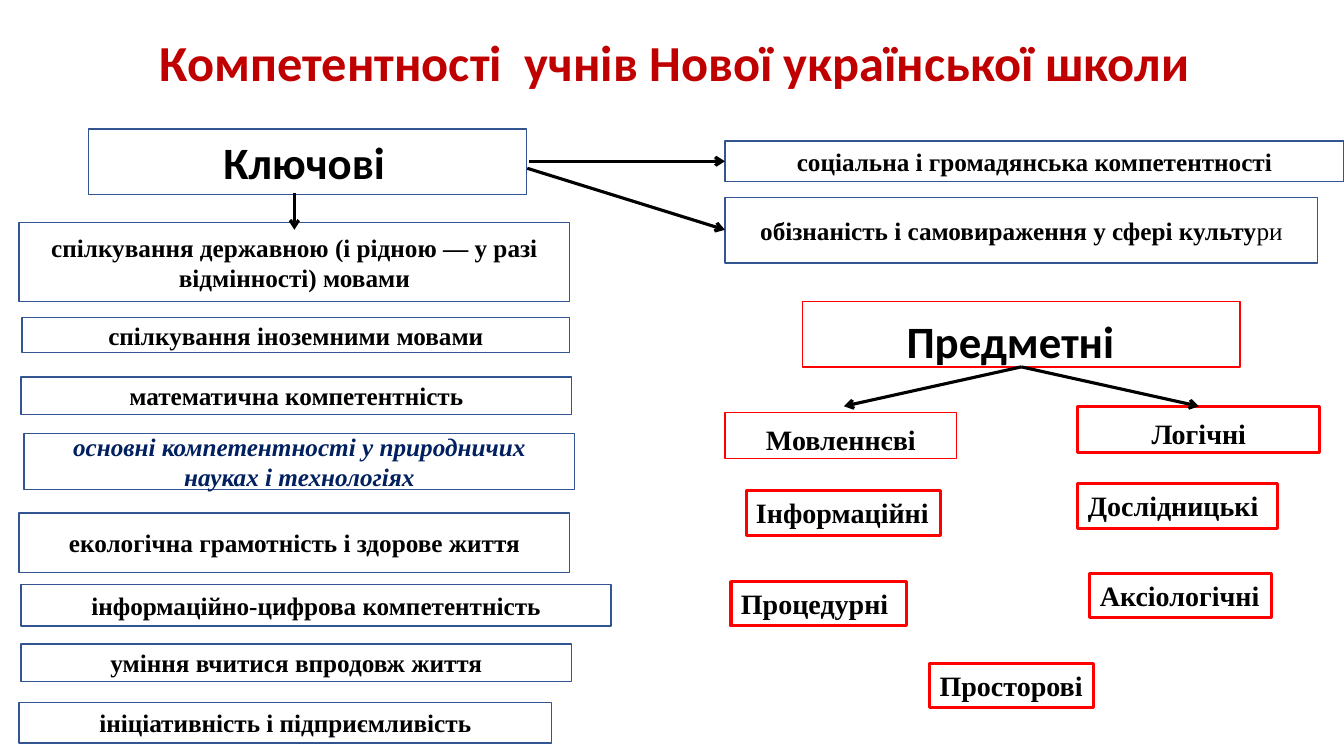
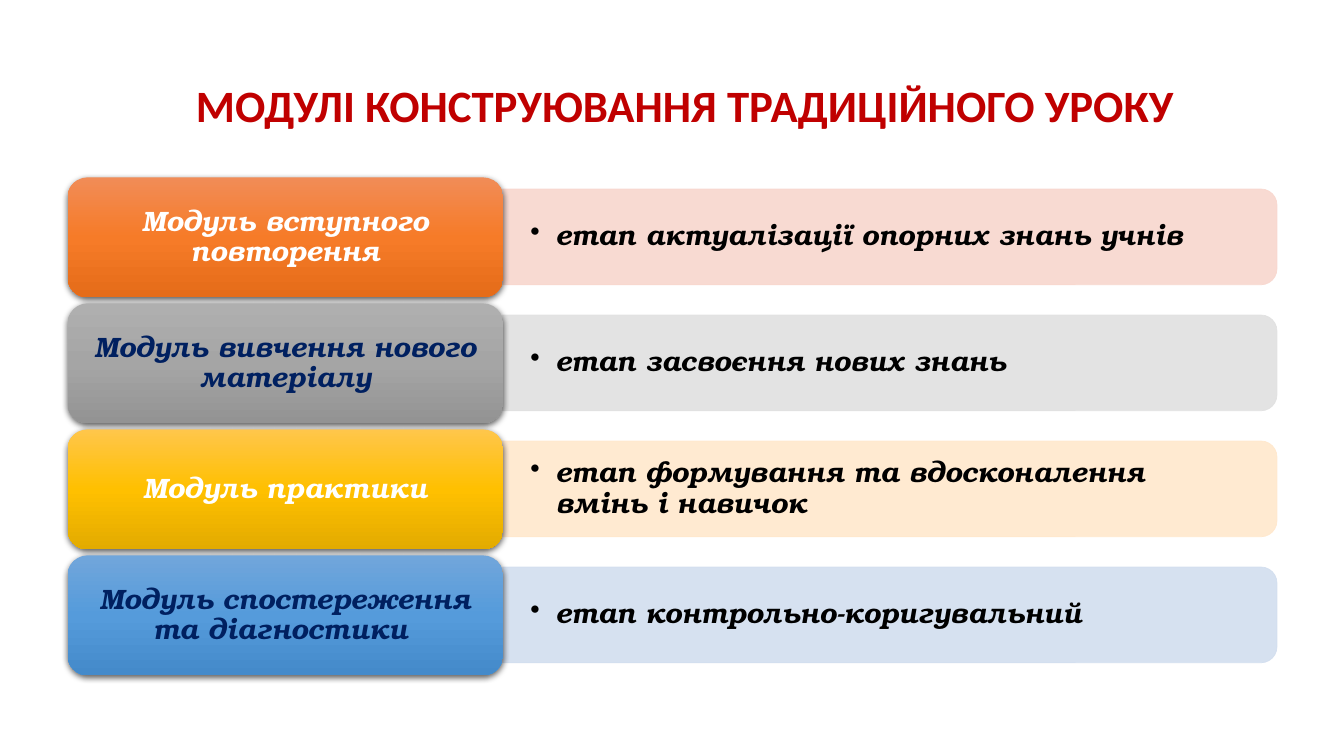
from lxml import etree
from pptx import Presentation
from pptx.dml.color import RGBColor
from pptx.enum.shapes import MSO_CONNECTOR, MSO_SHAPE
from pptx.enum.text import MSO_ANCHOR, MSO_AUTO_SIZE, PP_ALIGN
from pptx.oxml.ns import qn
from pptx.util import Pt

# Enum members
RECT = MSO_SHAPE.RECTANGLE
ROUND = MSO_SHAPE.ROUNDED_RECTANGLE
TAB = MSO_SHAPE.ROUND_2_SAME_RECTANGLE
LINE = MSO_CONNECTOR.STRAIGHT
MID, TOP = MSO_ANCHOR.MIDDLE, MSO_ANCHOR.TOP
LEFT, CENTER = PP_ALIGN.LEFT, PP_ALIGN.CENTER
FIT, FIXED = MSO_AUTO_SIZE.SHAPE_TO_FIT_TEXT, MSO_AUTO_SIZE.NONE

# Shared look: 100 px to the inch
SCALE = 9144
WHITE = RGBColor(0xFF, 0xFF, 0xFF)
BLACK = RGBColor(0, 0, 0)
NAVY = RGBColor(0x00, 0x20, 0x60)
BLUE = RGBColor(0x32, 0x54, 0x91)
RED = RGBColor(0xFF, 0, 0)
WINE = RGBColor(0xC0, 0, 0)
SANS, SERIF, BOOK = "Calibri", "Times New Roman", "TeX Gyre Bonum"

# Left, top, width, height and text of each key competence
KEYS = [
    (19, 221, 546, 78, "спілкування державною (і рідною — у разі відмінності) мовами"),
    (22, 315, 543, 35, "спілкування іноземними мовами"),
    (21, 374, 546, 37, "математична компетентність"),
    (19, 509, 546, 59, "екологічна грамотність і здорове життя"),
    (21, 580, 585, 41, "інформаційно-цифрова компетентність"),
    (21, 639, 546, 37, "уміння вчитися впродовж життя"),
    (19, 697, 528, 40, "ініціативність і підприємливість"),
    (719, 140, 614, 40, "соціальна і громадянська компетентності"),
]

# Left, top, width and text of each tag that fits its text
TAGS = [
    (740, 487, 193, "Інформаційні"),
    (1069, 480, 198, "Дослідницькі"),
    (725, 577, 174, "Процедурні "),
    (1081, 569, 180, "Аксіологічні"),
    (922, 658, 163, "Просторові"),
]

# Start and end of each arrow
ARROWS = [
    (525, 160, 719, 160),
    (523, 167, 719, 228),
    (292, 191, 292, 228),
    (1013, 364, 837, 403),
    (1013, 364, 1189, 403),
]

# Module, its text colour, gradient from top to bottom, stage, bar colour
STEPS = [
    ("Модуль вступного повторення", WHITE, ("F18C57", "F67B28", "E56C19"),
     "етап актуалізації опорних знань учнів", RGBColor(0xF8, 0xD7, 0xCE)),
    ("Модуль вивчення нового матеріалу", NAVY, ("AFAFAF", "A5A5A5", "939393"),
     "етап засвоєння нових знань", RGBColor(0xE1, 0xE1, 0xE1)),
    ("Модуль практики", WHITE, ("FFC64B", "FFC000", "E3AB00"),
     "етап формування та вдосконалення вмінь і навичок", RGBColor(0xFF, 0xE8, 0xCC)),
    ("Модуль спостереження та діагностики ", NAVY, ("71A6DB", "559BDB", "448ACA"),
     "етап контрольно-коригувальний", RGBColor(0xD2, 0xDE, 0xEF)),
]
STEP = 125


def px(*vals):
    return [round(v * SCALE) for v in vals]


def node(root, tag, **attrs):
    """Add a drawing element under root."""
    item = etree.SubElement(root, qn("a:" + tag))
    for name, val in attrs.items():
        item.set(name, str(val))
    return item


def run(text, size=18, font=SERIF, color=BLACK, bold=True, slant=False):
    return text, size, font, color, bold, slant


def write(shape, runs, align=CENTER, space=1.0, anchor=MID, pad=(10, 5)):
    """Fill the first paragraph of a shape run by run."""
    frame = shape.text_frame
    frame.word_wrap = True
    frame.vertical_anchor = anchor
    frame.margin_left = frame.margin_right = px(pad[0])[0]
    frame.margin_top = frame.margin_bottom = px(pad[1])[0]
    para = frame.paragraphs[0]
    para.alignment = align
    para.line_spacing = space
    for text, size, font, color, bold, slant in runs:
        part = para.add_run()
        part.text = text
        look = part.font
        look.size, look.name = Pt(size), font
        look.bold, look.italic = bold, slant
        look.color.rgb = color
    return frame


def paint(shape, fill, edge, width):
    shape.fill.solid()
    shape.fill.fore_color.rgb = fill
    shape.line.color.rgb = edge
    shape.line.width = Pt(width)


def start(deck, text, size, area):
    """Add a slide with a formatted title."""
    slide = deck.slides.add_slide(deck.slide_layouts[5])
    title = slide.shapes.title
    title.left, title.top, title.width, title.height = px(*area)
    frame = write(title, [run(text, size, SANS, WINE)], space=0.9)
    frame.auto_size = FIXED
    return slide


def box(slide, area, runs, edge=BLUE):
    shape = slide.shapes.add_shape(RECT, *px(*area))
    shape.shadow.inherit = False
    paint(shape, WHITE, edge, 1)
    write(shape, runs)


def tag(slide, area, text, width=2.25, align=LEFT, space=1.0, wrap=False):
    shape = slide.shapes.add_textbox(*px(*area))
    paint(shape, WHITE, RED, width)
    frame = write(shape, [run(text, 20)], align, space, TOP)
    frame.word_wrap = wrap
    frame.auto_size = FIT


def arrow(slide, ends):
    line = slide.shapes.add_connector(LINE, *px(*ends))
    line.line.color.rgb = BLACK
    line.line.width = Pt(2.25)
    node(line.line._get_or_add_ln(), "tailEnd", type="arrow")
    node(line._element.spPr, "effectLst")


def bar(slide, mid, text, color):
    """Add a pale bar, rounded on its right, with a bulleted stage."""
    wide, high = 768, 95
    shape = slide.shapes.add_shape(
        TAB, *px(882.5 - high / 2, mid - wide / 2, high, wide))
    shape.rotation = 90
    shape.shadow.inherit = False
    paint(shape, color, color, 0.5)
    for tint in shape._element.spPr.iter(qn("a:srgbClr")):
        node(tint, "alpha", val=90000)
    note = slide.shapes.add_textbox(*px(499, mid - 43, 763, 86))
    frame = write(note, [run(text, 20, BOOK, slant=True)], LEFT, 0.9, pad=(27, 14))
    props = frame.paragraphs[0]._p.get_or_add_pPr()
    props.set("marL", str(25 * SCALE))
    props.set("indent", str(-25 * SCALE))
    node(props, "buChar", char="•")


def pill(slide, top, text, color, shades):
    """Add a shaded module block with a soft shadow."""
    shape = slide.shapes.add_shape(ROUND, *px(67, top, 432, 119))
    shape.line.fill.background()
    shape.fill.gradient()
    shape.fill.gradient_angle = 270
    props = shape._element.spPr
    stops = props.find(".//" + qn("a:gsLst"))
    for old in list(stops):
        stops.remove(old)
    for i, shade in enumerate(shades):
        node(node(stops, "gs", pos=i * 50000), "srgbClr", val=shade)
    shape.shadow.inherit = False
    glow = node(props.find(qn("a:effectLst")), "outerShdw", blurRad=Pt(4.5),
                dist=Pt(1.5), dir=5400000, algn="ctr", rotWithShape=0)
    node(node(glow, "srgbClr", val="000000"), "alpha", val=63000)
    write(shape, [run(text, 20, BOOK, color, slant=True)], space=0.9, pad=(14, 10))


def skills(deck):
    slide = start(deck, "Компетентності  учнів Нової української школи", 36,
                  (130, 30, 1079, 69))
    # Key competences
    for *area, text in KEYS:
        box(slide, area, [run(text)])
    box(slide, (24, 430, 546, 56),
        [run("основні компетентності у природничих науках і технологіях",
             color=NAVY, slant=True)])
    box(slide, (719, 196, 588, 65),
        [run("обізнаність і самовираження у сфері культу"), run("ри", bold=False)])
    # Group heads
    box(slide, (88, 128, 434, 65),
        [run("Ключові", 32, SANS), run(" ", color=WHITE)])
    box(slide, (796, 299, 434, 65),
        [run("Предметні", 32, SANS), run(" ", 44), run(" ", color=WHITE)], RED)
    # Subject competences
    tag(slide, (719, 409, 230, 46), "Мовленнєві", 1, CENTER, 1.15, True)
    tag(slide, (1069, 403, 240, 46), "Логічні", 2.25, CENTER, 1.15, True)
    for left, top, wide, text in TAGS:
        tag(slide, (left, top, wide, 44), text)
    for ends in ARROWS:
        arrow(slide, ends)


def lesson(deck):
    slide = start(deck, "МОДУЛІ КОНСТРУЮВАННЯ ТРАДИЦІЙНОГО УРОКУ", 32,
                  (62, 60, 1235, 94))
    for i, (name, color, shades, stage, pale) in enumerate(STEPS):
        bar(slide, 235 + i * STEP, stage, pale)
        pill(slide, 176 + i * STEP, name, color, shades)


def main():
    deck = Presentation()
    deck.slide_width, deck.slide_height = px(1333, 750)
    skills(deck)
    lesson(deck)
    deck.save("out.pptx")


if __name__ == "__main__":
    main()
